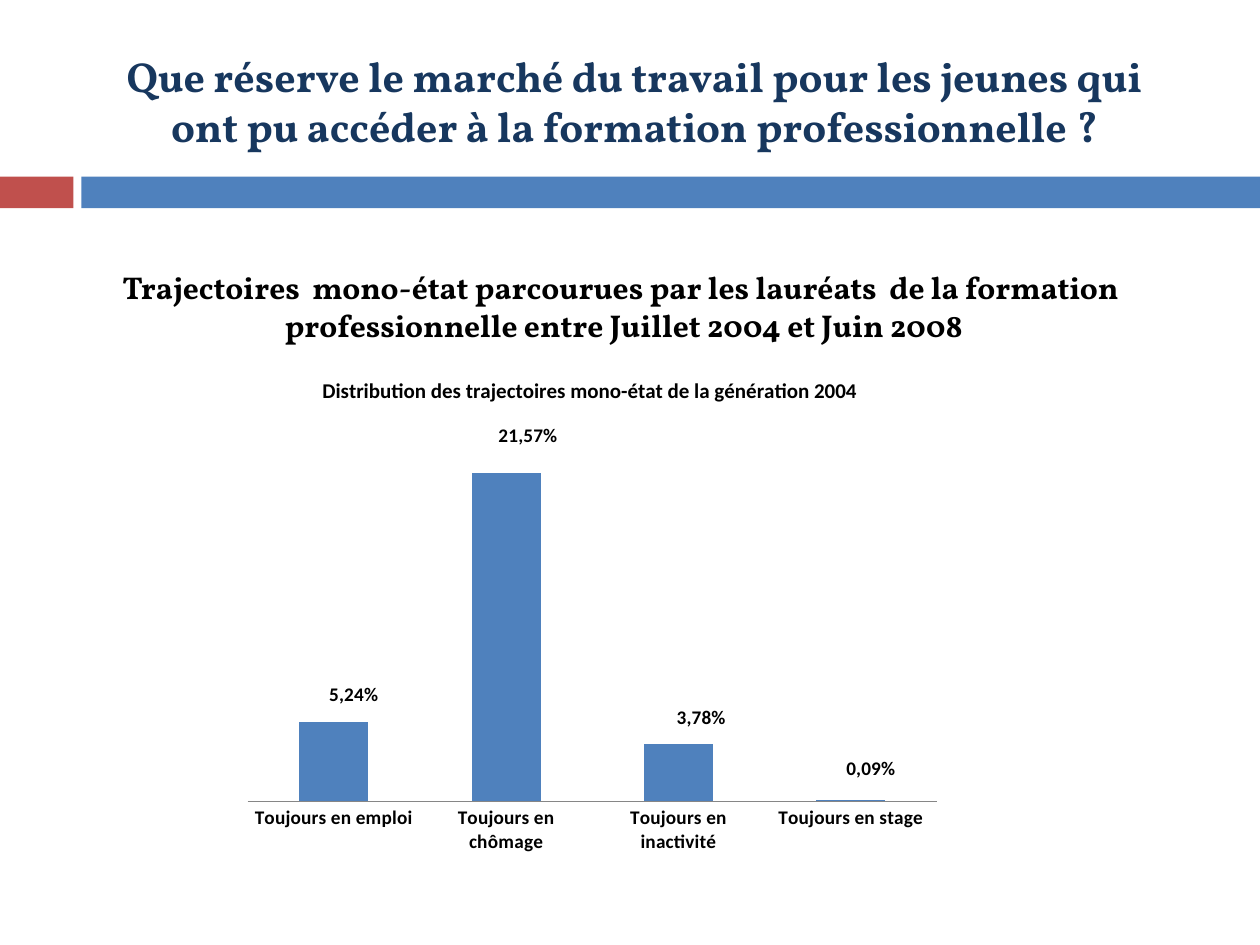
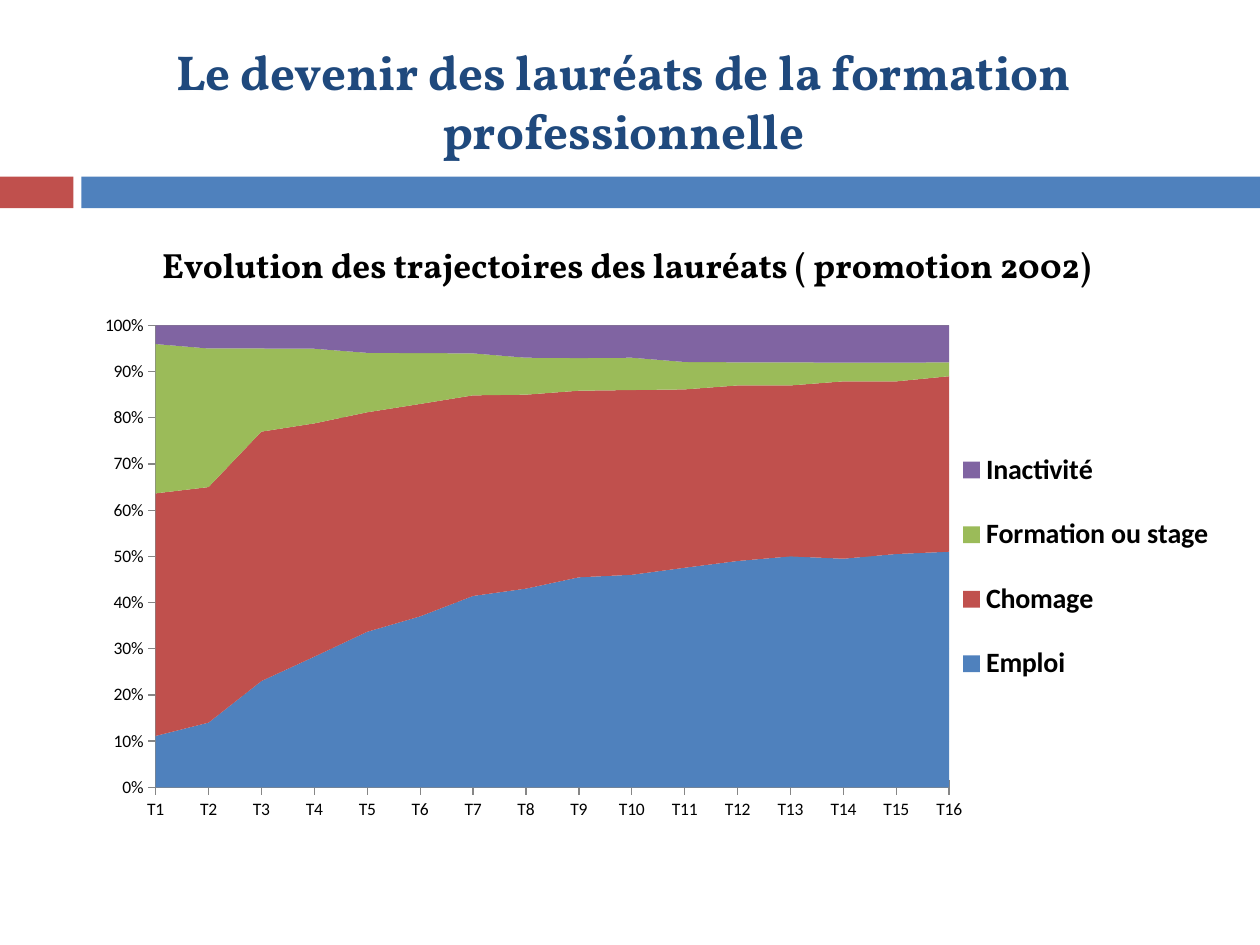
from lxml import etree
from pptx import Presentation
from pptx.chart.data import CategoryChartData
from pptx.dml.color import RGBColor
from pptx.enum.chart import (XL_CHART_TYPE, XL_LABEL_POSITION,
                             XL_LEGEND_POSITION, XL_TICK_MARK)
from pptx.enum.shapes import MSO_SHAPE
from pptx.enum.text import MSO_ANCHOR, MSO_AUTO_SIZE, PP_ALIGN
from pptx.oxml.ns import qn
from pptx.util import Pt

RECTANGLE = MSO_SHAPE.RECTANGLE
MIDDLE, TOP = MSO_ANCHOR.MIDDLE, MSO_ANCHOR.TOP
CENTER = PP_ALIGN.CENTER
NO_AUTOFIT = MSO_AUTO_SIZE.NONE
COLUMNS = XL_CHART_TYPE.COLUMN_CLUSTERED
STACKED_AREAS = XL_CHART_TYPE.AREA_STACKED_100
OUTSIDE_END = XL_LABEL_POSITION.OUTSIDE_END
LEGEND_RIGHT = XL_LEGEND_POSITION.RIGHT
TICK_NONE, TICK_CROSS = XL_TICK_MARK.NONE, XL_TICK_MARK.CROSS

BLUE, RED, GREEN, PURPLE = "4F81BD", "C0504D", "9BBB59", "8064A2"
BLACK, AXIS_GRAY = "000000", "868686"
NAVY, DARK_BLUE = "17375E", "1F497D"
HEADING_FONT, CHART_FONT = "Vollkorn", "Calibri"
TWO_DECIMALS, PERCENT = "#,##0.00", "0%"

# Boxes are (left, top, width, height) in points.
BANDS = [((0, 101, 42, 18), RED), ((46.5, 101, 673.5, 18), BLUE)]
SINGLE_STATE_BOX = (133, 204, 410.5, 290)
EVOLUTION_BOX = (46.5, 174, 673.5, 300)

# Category, percentage, shift of its label in points.
SINGLE_STATES = [
    ("Toujours en emploi", 5.24, (11.5, -5.5)),
    ("Toujours en chômage", 21.57, (12.5, -11.5)),
    ("Toujours en inactivité", 3.78, (13, -5.5)),
    ("Toujours en stage", 0.09, (11.5, -8.5)),
]

STATES_BY_QUARTER = [
    ("Emploi", BLUE,
     [11, 14, 23, 28, 34, 37, 41, 43, 45, 46, 48, 49, 50, 49, 50, 51]),
    ("Chomage", RED,
     [52, 51, 54, 50, 48, 46, 43, 42, 40, 40, 39, 38, 37, 38, 37, 38]),
    ("Formation ou stage", GREEN,
     [32, 30, 18, 16, 13, 11, 9, 8, 7, 7, 6, 5, 5, 4, 4, 3]),
    ("Inactivité", PURPLE,
     [4, 5, 5, 5, 6, 6, 6, 7, 7, 7, 8, 8, 8, 8, 8, 8]),
]


def paint(color_format, color):
    color_format.rgb = RGBColor.from_string(color)


def fill_solid(fill, color):
    fill.solid()
    paint(fill.fore_color, color)


def style_font(font, name, size, color=BLACK, bold=True):
    font.name, font.size, font.bold = name, Pt(size), bold
    paint(font.color, color)


def write_heading(shape, box, lines, size, color, anchor):
    """Move a text shape to its box and write centred bold lines in it."""
    shape.left, shape.top, shape.width, shape.height = map(Pt, box)
    frame = shape.text_frame
    frame.word_wrap = True
    frame.auto_size = NO_AUTOFIT
    frame.vertical_anchor = anchor
    frame.text = "\n".join(lines)
    for paragraph in frame.paragraphs:
        paragraph.alignment = CENTER
        style_font(paragraph.font, HEADING_FONT, size, color)


def add_bands(slide):
    for box, color in BANDS:
        band = slide.shapes.add_shape(RECTANGLE, *map(Pt, box))
        band.shadow.inherit = False
        fill_solid(band.fill, color)
        band.line.fill.background()


def add_titled_slide(presentation, title_box, lines, size, color):
    slide = presentation.slides.add_slide(presentation.slide_layouts[5])
    add_bands(slide)
    write_heading(slide.shapes.title, title_box, lines, size, color, MIDDLE)
    return slide


def add_subtitle(slide, box, lines, size):
    text_box = slide.shapes.add_textbox(*map(Pt, box))
    write_heading(text_box, box, lines, size, BLACK, TOP)


def place_chart_part(part, chart_box, place, after=None, edge=True,
                     inner=False):
    """Place a chart part, in points relative to the chart's box."""
    for old_layout in part.findall(qn("c:layout")):
        part.remove(old_layout)
    layout = etree.Element(qn("c:layout"))
    manual = etree.SubElement(layout, qn("c:manualLayout"))
    settings = [("layoutTarget", "inner")] if inner else []
    if edge:
        settings += [("xMode", "edge"), ("yMode", "edge")]
    width, height = chart_box[2:]
    for name, length, extent in zip("xywh", place, (width, height) * 2):
        settings.append((name, f"{length / extent:.4f}"))
    for name, value in settings:
        etree.SubElement(manual, qn(f"c:{name}")).set("val", value)
    if after:
        part.find(qn(after)).addnext(layout)
    else:
        part.insert(0, layout)


def find_part(chart, tag):
    return chart.element.find(".//" + qn(tag))


def format_numbers(labels, number_format):
    labels.number_format = number_format
    labels.number_format_is_linked = False


def add_styled_chart(slide, kind, box, categories, series, plot_place,
                     number_format="General"):
    """Add a chart from (name, color, values) series."""
    data = CategoryChartData(number_format=number_format)
    data.categories = categories
    for name, _, values in series:
        data.add_series(name, values)
    chart = slide.shapes.add_chart(kind, *map(Pt, box), data).chart
    style_font(chart.font, CHART_FONT, 10, bold=False)
    chart.has_title = chart.has_legend = False
    chart.plots[0].vary_by_categories = False
    for plotted, (_, color, _) in zip(chart.plots[0].series, series):
        fill_solid(plotted.format.fill, color)
    for axis in (chart.category_axis, chart.value_axis):
        axis.major_tick_mark = TICK_CROSS
        axis.minor_tick_mark = TICK_NONE
        paint(axis.format.line.color, AXIS_GRAY)
    place_chart_part(find_part(chart, "c:plotArea"), box, plot_place,
                     inner=True)
    return chart


def label_columns(chart, box):
    series = chart.plots[0].series[0]
    labels = series.data_labels
    labels.show_value = True
    labels.position = OUTSIDE_END
    format_numbers(labels, TWO_DECIMALS)
    style_font(labels.font, CHART_FONT, 11)
    for index, (_, value, _) in enumerate(SINGLE_STATES):
        label = series.points[index].data_label
        label.text_frame.text = f"{value:.2f}%".replace(".", ",")
        run = label.text_frame.paragraphs[0].runs[0]
        style_font(run.font, CHART_FONT, 11)
        label.position = OUTSIDE_END
    for part, (_, _, shift) in zip(chart.element.iter(qn("c:dLbl")),
                                   SINGLE_STATES):
        place_chart_part(part, box, shift, after="c:idx", edge=False)
    label_group = find_part(chart, "c:dLbls")
    leader_lines = label_group.find(qn("c:showLeaderLines"))
    if leader_lines is None:
        leader_lines = etree.SubElement(label_group,
                                        qn("c:showLeaderLines"))
    leader_lines.set("val", "0")


def add_single_state_chart(slide, box):
    categories, values, _ = zip(*SINGLE_STATES)
    chart = add_styled_chart(slide, COLUMNS, box, categories,
                             [("Series 1", BLUE, values)],
                             (8.5, 36.5, 394, 217.5), TWO_DECIMALS)
    chart.plots[0].gap_width = 150
    chart.has_title = True
    title = chart.chart_title
    title.include_in_layout = False
    title.text_frame.text = ("Distribution des trajectoires mono-état "
                             "de la génération 2004 ")
    style_font(title.text_frame.paragraphs[0].font, CHART_FONT, 12)
    place_chart_part(find_part(chart, "c:title"), box, (49, 9), after="c:tx")
    category_axis, value_axis = chart.category_axis, chart.value_axis
    category_axis.major_tick_mark = TICK_NONE
    style_font(category_axis.tick_labels.font, CHART_FONT, 11)
    value_axis.minimum_scale, value_axis.maximum_scale = 0, 25
    value_axis.has_major_gridlines = False
    format_numbers(value_axis.tick_labels, TWO_DECIMALS)
    value_axis.visible = False
    label_columns(chart, box)


def add_evolution_chart(slide, box):
    quarters = [f"T{number}" for number in range(1, 17)]
    chart = add_styled_chart(slide, STACKED_AREAS, box, quarters,
                             STATES_BY_QUARTER, (42.5, 12, 453.5, 264))
    value_axis = chart.value_axis
    format_numbers(value_axis.tick_labels, PERCENT)
    value_axis.has_major_gridlines = True
    paint(value_axis.major_gridlines.format.line.color, AXIS_GRAY)
    chart.has_legend = True
    legend = chart.legend
    legend.position = LEGEND_RIGHT
    legend.include_in_layout = False
    style_font(legend.font, CHART_FONT, 16)
    place_chart_part(find_part(chart, "c:legend"), box,
                     (496.5, 67.5, 155, 165), after="c:legendPos")


def add_single_state_slide(presentation):
    slide = add_titled_slide(
        presentation, (50, 18.5, 625, 78),
        ["Que réserve le marché du travail pour les jeunes qui "
         "ont pu accéder à la formation professionnelle ?"], 24, NAVY)
    add_single_state_chart(slide, SINGLE_STATE_BOX)
    add_subtitle(slide, (51.5, 149.5, 610, 51),
                 ["Trajectoires  mono-état parcourues par les lauréats  "
                  "de la formation ",
                  "professionnelle entre Juillet 2004 et Juin 2008"], 18)


def add_evolution_slide(presentation):
    slide = add_titled_slide(
        presentation, (76.5, 18.5, 565, 78),
        ["Le devenir des lauréats de la formation ", "professionnelle "],
        28, DARK_BLUE)
    add_evolution_chart(slide, EVOLUTION_BOX)
    add_subtitle(slide, (80, 135.5, 556.5, 31.5),
                 ["Evolution des trajectoires des lauréats "
                  "( promotion 2002)"], 20)


def main():
    presentation = Presentation()
    presentation.slide_width, presentation.slide_height = Pt(720), Pt(540)
    add_single_state_slide(presentation)
    add_evolution_slide(presentation)
    presentation.save("out.pptx")


if __name__ == "__main__":
    main()
